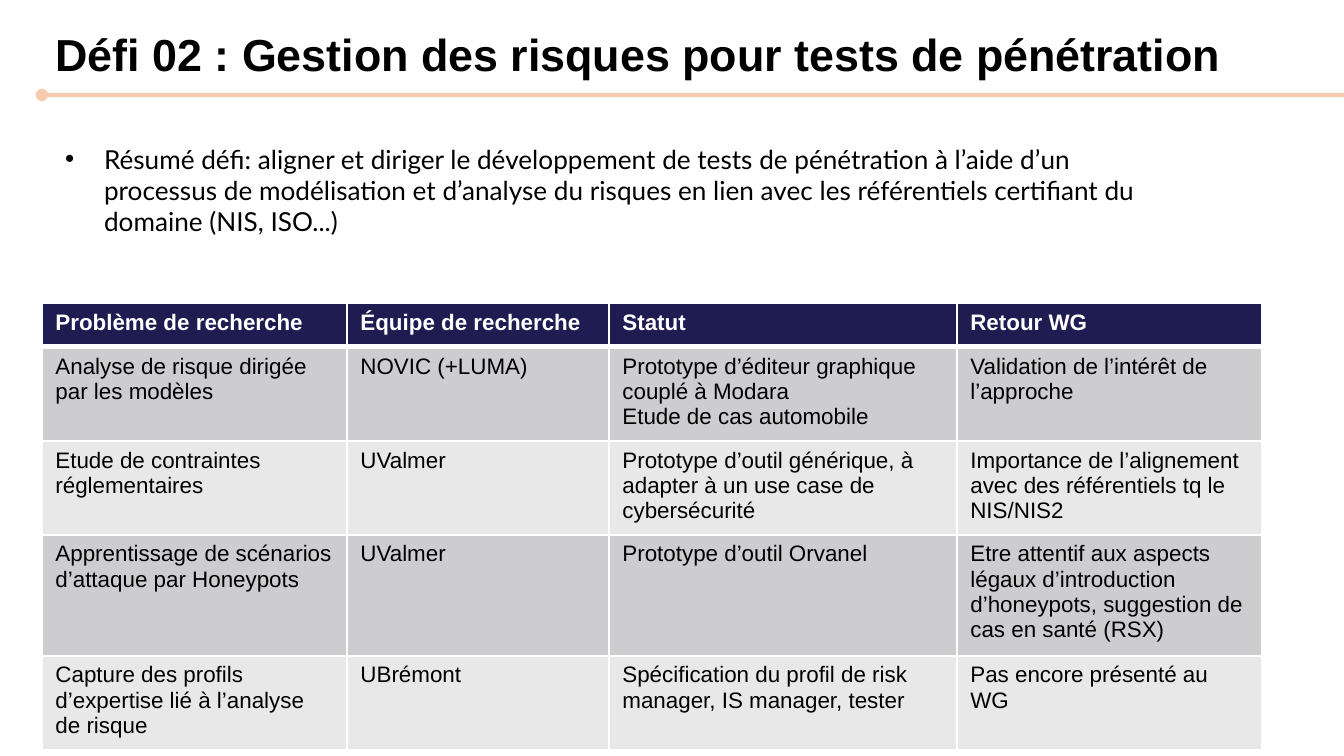
from lxml import etree
from pptx import Presentation
from pptx.dml.color import RGBColor
from pptx.enum.shapes import MSO_CONNECTOR
from pptx.enum.text import MSO_ANCHOR, MSO_AUTO_SIZE, PP_ALIGN
from pptx.oxml.ns import qn
from pptx.util import Emu, Pt

STRAIGHT = MSO_CONNECTOR.STRAIGHT
TOP = MSO_ANCHOR.TOP
NO_AUTOFIT = MSO_AUTO_SIZE.NONE
LEFT = PP_ALIGN.LEFT

BLACK = RGBColor(0x00, 0x00, 0x00)
WHITE = RGBColor(0xFF, 0xFF, 0xFF)
ORANGE = RGBColor(0xEB, 0x7E, 0x33)
NAVY = RGBColor(0x1F, 0x1C, 0x51)
ROW_FILLS = [RGBColor(0xCD, 0xCD, 0xD0), RGBColor(0xE8, 0xE8, 0xE9)]

TITLE = "Défi 02 : Gestion des risques pour tests de pénétration"
SUMMARY = (
    "Résumé défi: aligner et diriger le développement de tests de pénétration "
    "à l’aide d’un processus de modélisation et d’analyse du risques en lien "
    "avec les référentiels certifiant du domaine (NIS, ISO...)"
)
TABLE_ROWS = [
    ("Problème de recherche", "Équipe de recherche", "Statut", "Retour WG"),
    ("Analyse de risque dirigée par les modèles", "NOVIC (+LUMA)",
     "Prototype d’éditeur graphique couplé à Modara\nEtude de cas automobile",
     "Validation de l’intérêt de l’approche"),
    ("Etude de contraintes réglementaires", "UValmer",
     "Prototype d’outil générique, à adapter à un use case de cybersécurité",
     "Importance de l’alignement avec des référentiels tq le NIS/NIS2"),
    ("Apprentissage de scénarios d’attaque par Honeypots", "UValmer",
     "Prototype d’outil Orvanel",
     "Etre attentif aux aspects légaux d’introduction d’honeypots, "
     "suggestion de cas en santé (RSX)"),
    ("Capture des profils d’expertise lié à l’analyse de risque", "UBrémont",
     "Spécification du profil de risk manager, IS manager, tester",
     "Pas encore présenté au WG"),
]

SCALE = 914400 / 134.4
SLIDE_SIZE = (1344, 756)
TITLE_BOX = (42, 20, 1290, 67)
SUMMARY_BOX = (52, 130, 1144, 226)
SUMMARY_INDENT = 39
SUMMARY_MARGIN = 13
RULE_ENDS = (42, 95, 1388, 95)
TABLE_ORIGIN = (42, 303)
COLUMN_WIDTHS = [305, 262, 348, 305]
ROW_HEIGHTS = [44, 94, 94, 121, 94]

TITLE_FONT = {"name": "Arial", "size": Pt(24), "bold": True}
SUMMARY_FONT = {"name": "Lato", "size": Pt(14), "bold": False}
HEADER_FONT = {"name": "Arial", "size": Pt(12), "bold": True}
CELL_FONT = {"name": "Arial", "size": Pt(12), "bold": False}


def px(length):
    return Emu(round(length * SCALE))


def write_text(text_frame, text, font_values, color):
    text_frame.text = text
    for paragraph in text_frame.paragraphs:
        paragraph.alignment = LEFT
        paragraph.space_before = Pt(0)
        for run in paragraph.runs:
            for name, value in font_values.items():
                setattr(run.font, name, value)
            run.font.color.rgb = color


def fill_placeholder(placeholder, box, text, font_values):
    placeholder.left, placeholder.top, placeholder.width, placeholder.height = map(px, box)
    text_frame = placeholder.text_frame
    text_frame.word_wrap = True
    text_frame.auto_size = NO_AUTOFIT
    text_frame.vertical_anchor = TOP
    write_text(text_frame, text, font_values, BLACK)
    return text_frame


def add_rule(slide):
    """Add the translucent line with round ends below the title."""
    rule = slide.shapes.add_connector(STRAIGHT, *map(px, RULE_ENDS))
    rule.line.width = Pt(2.25)
    rule.line.color.rgb = ORANGE
    line = rule.line._get_or_add_ln()
    color = line.find(".//" + qn("a:srgbClr"))
    etree.SubElement(color, qn("a:alpha"), val="40000")
    for end in ("a:headEnd", "a:tailEnd"):
        etree.SubElement(line, qn(end), type="oval")
    etree.SubElement(rule._element.spPr, qn("a:effectLst"))


def add_borders(cell, widths):
    """Draw white borders; widths maps each side (L, R, T, B) to points."""
    properties = cell._tc.get_or_add_tcPr()
    for side, width in widths.items():
        border = etree.SubElement(properties, qn("a:ln" + side), w=str(Pt(width)))
        fill = etree.SubElement(border, qn("a:solidFill"))
        etree.SubElement(fill, qn("a:srgbClr"), val=str(WHITE))


def add_research_table(slide):
    size = (sum(COLUMN_WIDTHS), sum(ROW_HEIGHTS))
    table = slide.shapes.add_table(
        len(TABLE_ROWS), len(COLUMN_WIDTHS), *map(px, TABLE_ORIGIN + size)).table
    for column, width in zip(table.columns, COLUMN_WIDTHS):
        column.width = px(width)
    for row, height in zip(table.rows, ROW_HEIGHTS):
        row.height = px(height)
    for row_index, texts in enumerate(TABLE_ROWS):
        is_header = row_index == 0
        fill = NAVY if is_header else ROW_FILLS[(row_index - 1) % 2]
        font_values = HEADER_FONT if is_header else CELL_FONT
        color = WHITE if is_header else BLACK
        borders = {"L": 1, "R": 1,
                   "T": 3 if row_index == 1 else 1,
                   "B": 3 if is_header else 1}
        for column_index, text in enumerate(texts):
            cell = table.cell(row_index, column_index)
            write_text(cell.text_frame, text, font_values, color)
            add_borders(cell, borders)
            cell.fill.solid()
            cell.fill.fore_color.rgb = fill


def main():
    presentation = Presentation()
    presentation.slide_width, presentation.slide_height = map(px, SLIDE_SIZE)
    slide = presentation.slides.add_slide(presentation.slide_layouts[1])

    add_rule(slide)
    fill_placeholder(slide.shapes.title, TITLE_BOX, TITLE, TITLE_FONT)
    summary = fill_placeholder(slide.placeholders[1], SUMMARY_BOX, SUMMARY, SUMMARY_FONT)
    for side in ("left", "top", "right", "bottom"):
        setattr(summary, "margin_" + side, px(SUMMARY_MARGIN))
    bullet = summary.paragraphs[0]._p.get_or_add_pPr()
    bullet.set("marL", str(px(SUMMARY_INDENT)))
    bullet.set("indent", str(-px(SUMMARY_INDENT)))
    add_research_table(slide)

    presentation.save("out.pptx")


if __name__ == "__main__":
    main()
